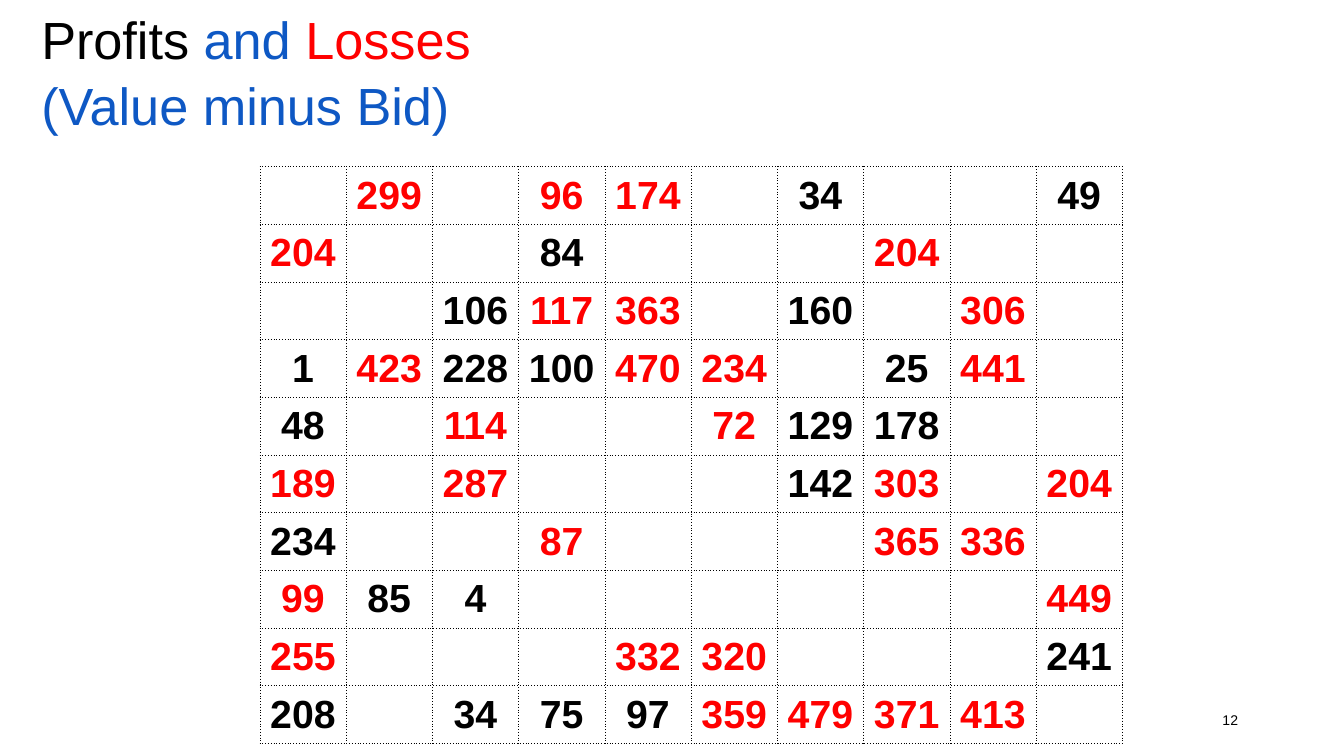
from typing import NamedTuple

from lxml import etree
from pptx import Presentation
from pptx.dml.color import RGBColor
from pptx.enum import text
from pptx.oxml.ns import qn
from pptx.util import Cm, Pt

INK = {"gain": "000000", "loss": "FF0000", "blue": "0E58C4"}
FACE = "Arial"

# Value minus bid: negative is a loss, None is an empty cell
O = None
GRID = [
    [O, -299, O, -96, -174, O, 34, O, O, 49],
    [-204, O, O, 84, O, O, O, -204, O, O],
    [O, O, 106, -117, -363, O, 160, O, -306, O],
    [1, -423, 228, 100, -470, -234, O, 25, -441, O],
    [48, O, -114, O, O, -72, 129, 178, O, O],
    [-189, O, -287, O, O, O, 142, -303, O, -204],
    [234, O, O, -87, O, O, O, -365, -336, O],
    [-99, 85, 4, O, O, O, O, O, O, -449],
    [-255, O, O, O, -332, -320, O, O, O, 241],
    [208, O, 34, 75, 97, -359, -479, -371, -413, O],
]
COL, ROW = 1.63, 1.08


class Box(NamedTuple):
    left: float
    top: float
    width: float
    height: float

    def cm(self) -> list:
        return [Cm(n) for n in self]


class Part(NamedTuple):
    words: str
    ink: str


HEAD = [
    [Part("Profits", "gain"), Part(" and ", "blue"), Part("Losses", "loss")],
    [Part("(Value minus Bid)", "blue")],
]


def style(font, size: float, ink: str, bold: bool = False) -> None:
    font.name, font.size, font.bold = FACE, Pt(size), bold
    font.color.rgb = RGBColor.from_string(INK[ink])


def draw_title(shape, box: Box) -> None:
    shape.left, shape.top, shape.width, shape.height = box.cm()
    frame = shape.text_frame
    frame.auto_size = text.MSO_AUTO_SIZE.NONE
    frame.vertical_anchor = text.MSO_ANCHOR.MIDDLE
    frame.margin_left = frame.margin_right = Cm(0.25)
    frame.margin_top = frame.margin_bottom = Cm(0.25)
    para = frame.paragraphs[0]
    para.alignment = text.PP_ALIGN.LEFT
    para.line_spacing = 1.05
    style(para.font, 28, "blue")
    for num, line in enumerate(HEAD):
        if num:
            para.add_line_break()
        for part in line:
            run = para.add_run()
            run.text = part.words
            run.font.color.rgb = RGBColor.from_string(INK[part.ink])


def dot_edges(cell) -> None:
    props = cell._tc.get_or_add_tcPr()
    for num, side in enumerate(("lnL", "lnR", "lnT", "lnB")):
        line = etree.Element(qn(f"a:{side}"), w=str(Pt(0.25)))
        fill = etree.SubElement(line, qn("a:solidFill"))
        etree.SubElement(fill, qn("a:srgbClr"), val=INK["gain"])
        etree.SubElement(line, qn("a:prstDash"), val="sysDot")
        props.insert(num, line)


def draw_cell(cell, value: int | None) -> None:
    cell.fill.background()
    dot_edges(cell)
    cell.vertical_anchor = text.MSO_ANCHOR.MIDDLE
    cell.margin_left = cell.margin_right = Cm(0.18)
    cell.margin_top = cell.margin_bottom = Cm(0.1)
    if value is None:
        return
    para = cell.text_frame.paragraphs[0]
    para.text = str(abs(value))
    para.alignment = text.PP_ALIGN.CENTER
    style(para.font, 21, "loss" if value < 0 else "gain", bold=True)


def draw_grid(slide, left: float, top: float) -> None:
    rows, cols = len(GRID), len(GRID[0])
    box = Box(left, top, cols * COL, rows * ROW)
    table = slide.shapes.add_table(rows, cols, *box.cm()).table
    table.first_row = table.horz_banding = False
    for col in table.columns:
        col.width = Cm(COL)
    for row, values in zip(table.rows, GRID):
        row.height = Cm(ROW)
        for cell, value in zip(row.cells, values):
            draw_cell(cell, value)


def draw_page(slide, box: Box, words: str) -> None:
    frame = slide.shapes.add_textbox(*box.cm()).text_frame
    frame.word_wrap = True
    frame.vertical_anchor = text.MSO_ANCHOR.MIDDLE
    para = frame.paragraphs[0]
    para.text = words
    para.alignment = text.PP_ALIGN.RIGHT
    style(para.font, 7.5, "gain")


def main() -> None:
    deck = Presentation()
    deck.slide_width, deck.slide_height = Cm(25.4), Cm(14.29)
    slide = deck.slides.add_slide(deck.slide_layouts[5])  # title only

    # Page number, table, title
    draw_page(slide, Box(17.93, 13.23, 5.72, 0.76), "12")
    draw_grid(slide, 4.91, 3.15)
    draw_title(slide.shapes.title, Box(0.53, 0.71, 18.92, 1.22))
    deck.save("out.pptx")


if __name__ == "__main__":
    main()
